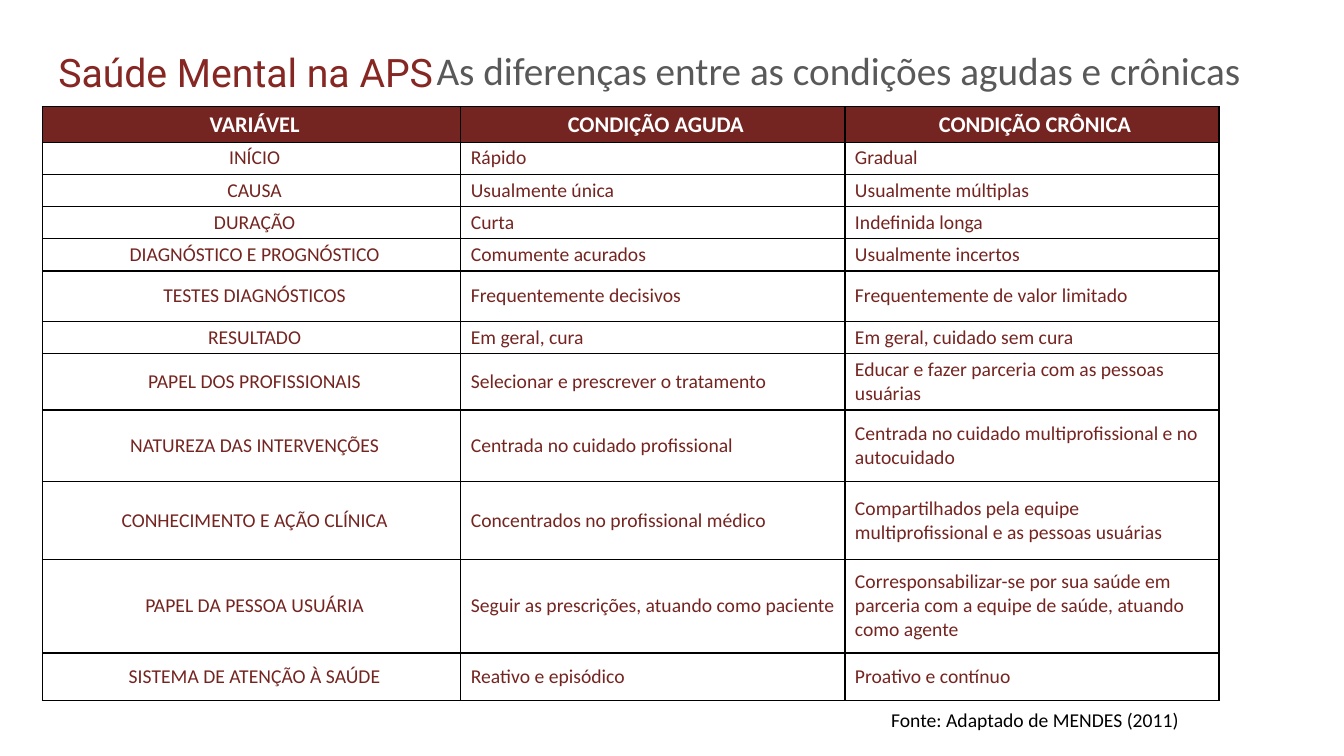
from dataclasses import dataclass

from lxml.etree import SubElement
from pptx import Presentation
from pptx.dml.color import RGBColor
from pptx.enum.text import MSO_ANCHOR, MSO_AUTO_SIZE, PP_ALIGN
from pptx.oxml.ns import qn
from pptx.slide import Slide
from pptx.table import Table, _Cell
from pptx.text.text import TextFrame
from pptx.util import Inches, Pt

WINE = "742521"
WHITE = "FFFFFF"
BLACK = "000000"
HEADERS = ("VARIÁVEL", "CONDIÇÃO AGUDA", "CONDIÇÃO CRÔNICA")
HEADER_HEIGHT = 0.35
HEADER_INDENT = Inches(0.38)
COLUMN_WIDTHS = (4.15, 3.81, 3.71)


@dataclass(frozen=True)
class Comparison:
    variable: str
    acute: str
    chronic: str
    height: float = 0.32


@dataclass(frozen=True)
class TextStyle:
    size: float
    color: str
    font: str = "Calibri"
    bold: bool = False
    align: PP_ALIGN = PP_ALIGN.LEFT


@dataclass(frozen=True)
class Label:
    text: str
    position: tuple[float, float, float, float]
    style: TextStyle


COMPARISONS = (
    Comparison("INÍCIO", "Rápido", "Gradual"),
    Comparison("CAUSA", "Usualmente única", "Usualmente múltiplas"),
    Comparison("DURAÇÃO", "Curta", "Indefinida longa"),
    Comparison("DIAGNÓSTICO E PROGNÓSTICO", "Comumente acurados", "Usualmente incertos"),
    Comparison("TESTES DIAGNÓSTICOS", "Frequentemente decisivos",
               "Frequentemente de valor limitado", 0.5),
    Comparison("RESULTADO", "Em geral, cura", "Em geral, cuidado sem cura"),
    Comparison("PAPEL DOS PROFISSIONAIS", "Selecionar e prescrever o tratamento",
               "Educar e fazer parceria com as pessoas usuárias", 0.56),
    Comparison("NATUREZA DAS INTERVENÇÕES", "Centrada no cuidado profissional",
               "Centrada no cuidado multiprofissional e no autocuidado", 0.71),
    Comparison("CONHECIMENTO E AÇÃO CLÍNICA", "Concentrados no profissional médico",
               "Compartilhados pela equipe multiprofissional e as pessoas usuárias", 0.77),
    Comparison("PAPEL DA PESSOA USUÁRIA", "Seguir as prescrições, atuando como paciente",
               "Corresponsabilizar-se por sua saúde em parceria com a equipe de saúde, "
               "atuando como agente", 0.93),
    Comparison("SISTEMA DE ATENÇÃO À SAÚDE", "Reativo e episódico",
               "Proativo e contínuo", 0.47),
)
SECTION = Label("Saúde Mental na APS", (0.48, 0.43, 7.08, 0.57),
                TextStyle(28, "862723", "Roboto"))
SOURCE = Label("Fonte: Adaptado de MENDES (2011)", (8.74, 6.97, 3.63, 0.34),
               TextStyle(14, BLACK))
TITLE = Label("As diferenças entre as condições agudas e crônicas",
              (4.23, 0, 10.99, 1.45), TextStyle(28, "595959"))
HEADER_STYLE = TextStyle(16, WHITE, bold=True, align=PP_ALIGN.CENTER)
VARIABLE_STYLE = TextStyle(14, WINE, align=PP_ALIGN.CENTER)
VALUE_STYLE = TextStyle(14, WINE)


def rgb(color: str) -> RGBColor:
    return RGBColor.from_string(color)


def write_text(frame: TextFrame, text: str, style: TextStyle) -> None:
    frame.text = text
    para = frame.paragraphs[0]
    para.alignment = style.align
    para.font.name = style.font
    para.font.size = Pt(style.size)
    para.font.bold = style.bold
    para.font.color.rgb = rgb(style.color)


def add_label(page: Slide, label: Label) -> None:
    box = page.shapes.add_textbox(*map(Inches, label.position))
    box.text_frame.word_wrap = True
    box.text_frame.auto_size = MSO_AUTO_SIZE.SHAPE_TO_FIT_TEXT
    write_text(box.text_frame, label.text, label.style)


def fill_title(page: Slide) -> None:
    title = page.shapes.title
    title.left, title.top, title.width, title.height = map(Inches, TITLE.position)
    frame = title.text_frame
    frame.auto_size = MSO_AUTO_SIZE.NONE
    frame.vertical_anchor = MSO_ANCHOR.MIDDLE
    write_text(frame, TITLE.text, TITLE.style)
    frame.paragraphs[0].line_spacing = 0.9


def add_borders(cell: _Cell) -> None:
    """Draw the four cell borders; must run before the cell is filled."""
    properties = cell._tc.get_or_add_tcPr()
    for side in ("lnL", "lnR", "lnT", "lnB"):
        line = SubElement(properties, qn(f"a:{side}"), w=str(Pt(1)))
        fill = SubElement(line, qn("a:solidFill"))
        SubElement(fill, qn("a:srgbClr"), val=BLACK)


def format_cell(cell: _Cell, text: str, style: TextStyle) -> None:
    cell.vertical_anchor = MSO_ANCHOR.MIDDLE
    cell.margin_left = Inches(0.1)
    cell.margin_right = cell.margin_top = cell.margin_bottom = Inches(0.04)
    add_borders(cell)
    write_text(cell.text_frame, text, style)


def fill_header(table: Table) -> None:
    table.rows[0].height = Inches(HEADER_HEIGHT)
    for cell, heading in zip(table.rows[0].cells, HEADERS):
        format_cell(cell, heading, HEADER_STYLE)
        cell.fill.solid()
        cell.fill.fore_color.rgb = rgb(WINE)
        properties = cell.text_frame.paragraphs[0]._p.get_or_add_pPr()
        properties.set("marL", str(HEADER_INDENT))
        properties.set("indent", str(-HEADER_INDENT))


def add_comparison_table(page: Slide) -> None:
    height = HEADER_HEIGHT + sum(item.height for item in COMPARISONS)
    table = page.shapes.add_table(
        len(COMPARISONS) + 1, len(HEADERS), Inches(0.42), Inches(1.06),
        Inches(sum(COLUMN_WIDTHS)), Inches(height)).table
    table.horz_banding = False
    for column, width in zip(table.columns, COLUMN_WIDTHS):
        column.width = Inches(width)
    fill_header(table)
    styles = (VARIABLE_STYLE, VALUE_STYLE, VALUE_STYLE)
    for number, item in enumerate(COMPARISONS, start=1):
        row = table.rows[number]
        row.height = Inches(item.height)
        texts = (item.variable, item.acute, item.chronic)
        for cell, text, style in zip(row.cells, texts, styles):
            format_cell(cell, text, style)
            cell.fill.background()


def main() -> None:
    deck = Presentation()
    deck.slide_width, deck.slide_height = Inches(13.33), Inches(7.5)
    page = deck.slides.add_slide(deck.slide_layouts.get_by_name("Title Only"))
    add_label(page, SECTION)
    fill_title(page)
    add_comparison_table(page)
    add_label(page, SOURCE)
    deck.save("out.pptx")


if __name__ == "__main__":
    main()
